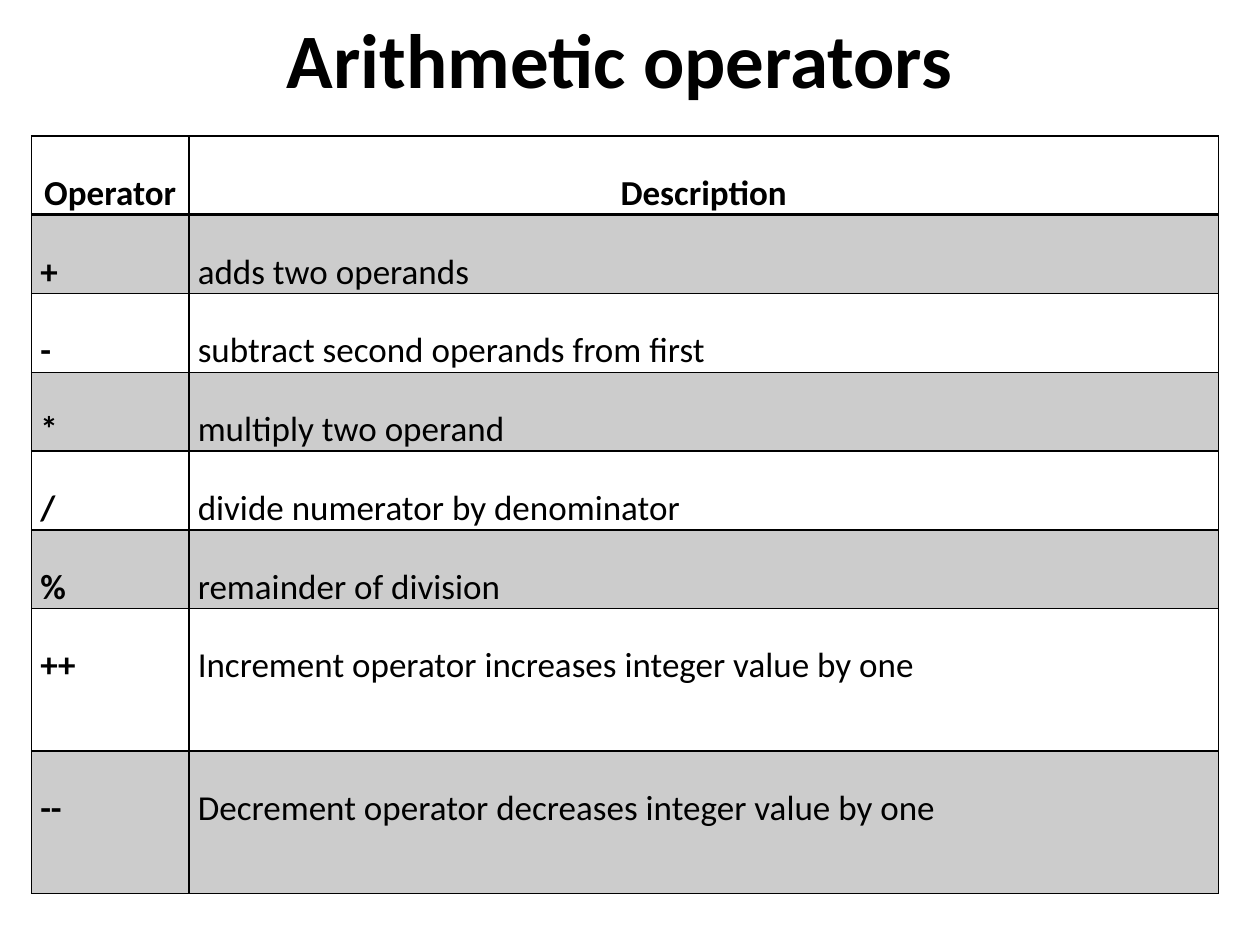
from lxml import etree
from pptx import Presentation, util as u
from pptx.dml.color import RGBColor
from pptx.enum import text
from pptx.oxml.ns import qn

TITLE = "Arithmetic operators"
HEADER = ("Operator", "Description")
OPERATORS = [
    ("+", "adds two operands"),
    ("-", "subtract second operands from first"),
    ("*", "multiply two operand"),
    ("/", "divide numerator by denominator"),
    ("%", "remainder of division"),
    ("++", "Increment operator increases integer value by one"),
    ("--", "Decrement operator decreases integer value by one"),
]
COLUMN_WIDTHS = (1.25, 8.17)
ROW_HEIGHT, TALL_ROW_HEIGHT = 0.55, 1.13
TALL_OPERATORS = ("++", "--")
BLACK = "000000"


def color(value):
    return RGBColor.from_string(value)


def style(paragraph, size, bold, centered):
    paragraph.alignment = text.PP_ALIGN.CENTER if centered else text.PP_ALIGN.LEFT
    font = paragraph.font
    font.name, font.size, font.bold = "Calibri", u.Pt(size), bold
    font.color.rgb = color(BLACK)


def add_borders(cell, **widths):
    properties = cell._tc.get_or_add_tcPr()
    for side, width in widths.items():
        line = etree.SubElement(properties, qn(f"a:ln{side}"), w=str(u.Pt(width)))
        fill = etree.SubElement(line, qn("a:solidFill"))
        etree.SubElement(fill, qn("a:srgbClr"), val=BLACK)


def shade(cell, opacity):
    cell.fill.solid()
    cell.fill.fore_color.rgb = color(BLACK)
    tint = cell._tc.tcPr.find(f"{qn('a:solidFill')}/{qn('a:srgbClr')}")
    etree.SubElement(tint, qn("a:alpha"), val=str(opacity * 1000))


prs = Presentation()
prs.slide_width, prs.slide_height = u.Inches(10), u.Inches(7.5)
slide = prs.slides.add_slide(prs.slide_layouts[6])

# Title
title = slide.shapes.add_textbox(
    u.Inches(0.42), u.Inches(-0.17), u.Inches(9), u.Inches(1.25)).text_frame
title.word_wrap = True
title.vertical_anchor = text.MSO_ANCHOR.MIDDLE
title.text = TITLE
style(title.paragraphs[0], 44, True, True)

# Table grid
rows = [HEADER] + OPERATORS
heights = [TALL_ROW_HEIGHT if row[0] in TALL_OPERATORS else ROW_HEIGHT for row in rows]
table = slide.shapes.add_table(
    len(rows), len(HEADER), u.Inches(0.25), u.Inches(1.08),
    u.Inches(sum(COLUMN_WIDTHS)), u.Inches(sum(heights))).table
table.first_row = table.horz_banding = False
for column, width in zip(table.columns, COLUMN_WIDTHS):
    column.width = u.Inches(width)
for row, height in zip(table.rows, heights):
    row.height = u.Inches(height)

# Cells: every other row shaded, a thicker rule under the header
for r, row in enumerate(rows):
    for c, content in enumerate(row):
        cell = table.cell(r, c)
        cell.text = content
        cell.margin_left = cell.margin_right = u.Inches(0.07)
        cell.margin_top, cell.margin_bottom = u.Pt(30), 0
        paragraph = cell.text_frame.paragraphs[0]
        paragraph.line_spacing = paragraph.space_after = u.Pt(15)
        style(paragraph, 20, r == 0 or c == 0, r == 0)
        add_borders(cell, L=1, R=1, T=2 if r == 1 else 1, B=2 if r == 0 else 1)
        if r % 2:
            shade(cell, 20)
        else:
            cell.fill.background()

prs.save("out.pptx")
